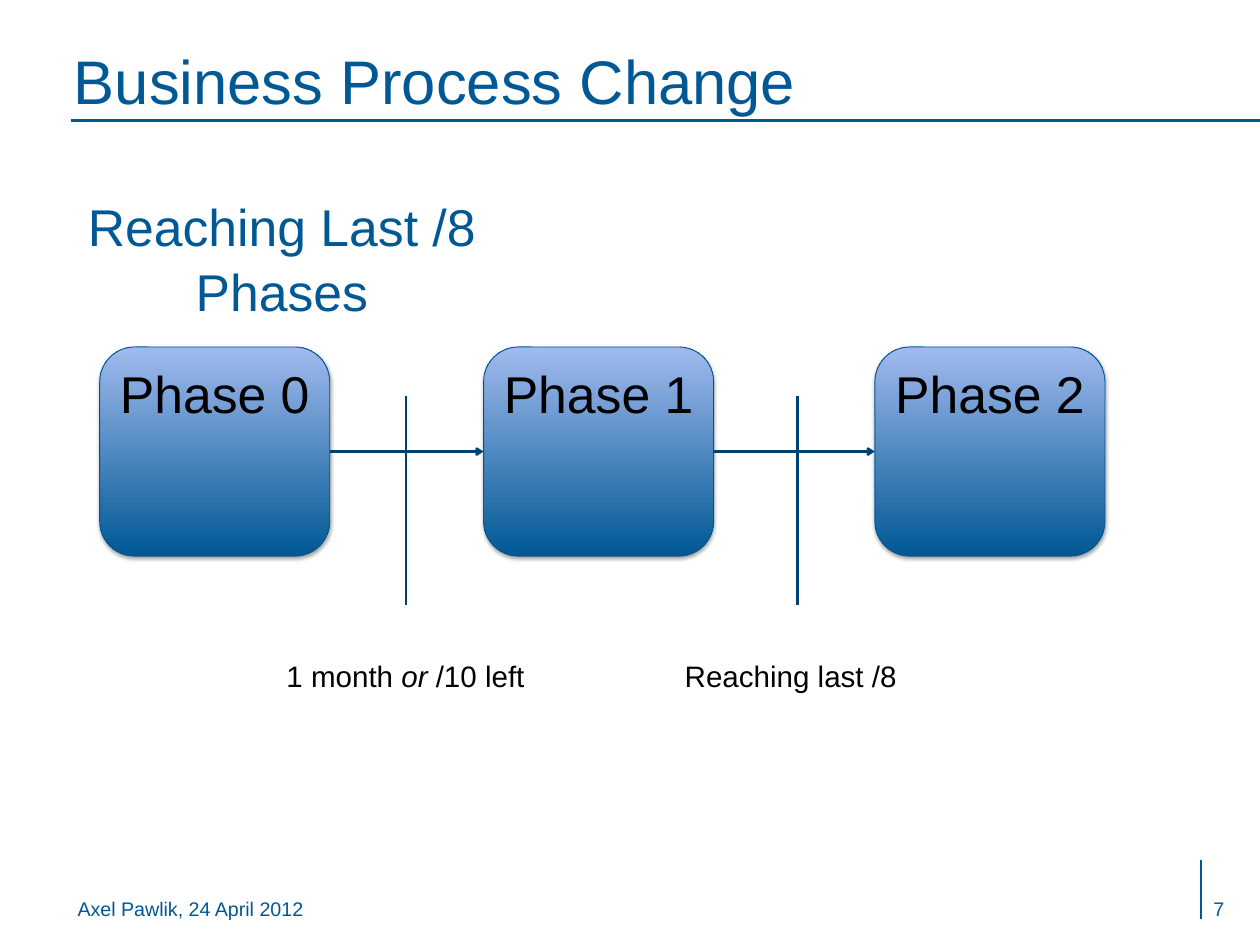
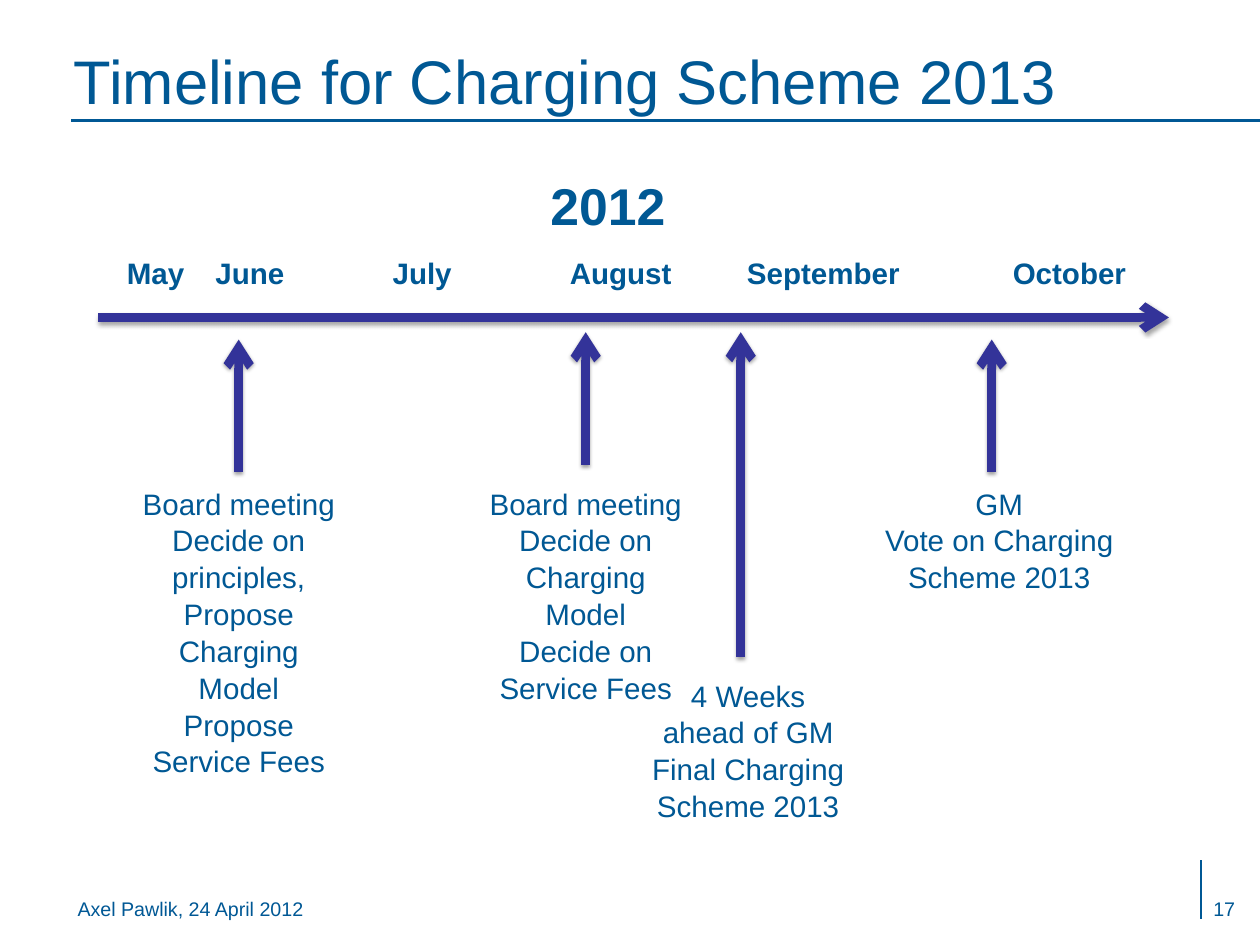
from itertools import pairwise

from lxml.etree import SubElement as Sub
from pptx import Presentation
from pptx.dml.color import RGBColor as Rgb
from pptx.enum.shapes import MSO_CONNECTOR as Link, MSO_SHAPE as Form
from pptx.enum.text import MSO_ANCHOR as Anchor, PP_ALIGN as Align
from pptx.oxml.ns import qn
from pptx.util import Pt

INK = {
    "blue": "005894",
    "rule": "005895",
    "edge": "005691",
    "pale": "A1BAEE",
    "link": "00426F",
    "time": "333399",
    "black": "000000",
}
FONT = "Arial"
WIDE, HIGH = 1024, 768


def color(name):
    return Rgb.from_string(INK[name])


def write(frame, lines, size, ink="blue", bold=False, align=Align.CENTER, pitch=None):
    for num, line in enumerate(lines):
        para = frame.add_paragraph() if num else frame.paragraphs[0]
        para.alignment = align
        para.line_spacing = pitch
        parts = line.split("_")
        para.text = parts[0]
        for part in parts[1:]:
            para.add_run().text = part
        for spot, run in enumerate(para.runs):
            run.font.name = FONT
            run.font.size = Pt(size)
            run.font.bold = bold
            run.font.italic = spot % 2 == 1
            run.font.color.rgb = color(ink)


def label(slide, rect, lines, size, wrap=True, **style):
    frame = slide.shapes.add_textbox(*map(Pt, rect)).text_frame
    frame.word_wrap = wrap
    write(frame, lines, size, **style)
    return frame


def inset(frame, left, top, right, low):
    frame.margin_left, frame.margin_top = Pt(left), Pt(top)
    frame.margin_right, frame.margin_bottom = Pt(right), Pt(low)


def effect(shape, shade):
    box = Sub(shape._element.spPr, qn("a:effectLst"))
    if shade:
        cast = Sub(box, qn("a:outerShdw"), blurRad=str(Pt(3.1)), dist=str(Pt(1.8)),
                   dir="5400000", rotWithShape="0")
        tone = Sub(cast, qn("a:srgbClr"), val=INK["black"])
        Sub(tone, qn("a:alpha"), val="35000")


def line(slide, start, end, ink, width, head=False, shade=False):
    link = slide.shapes.add_connector(Link.STRAIGHT, *map(Pt, start + end))
    link.line.color.rgb = color(ink)
    link.line.width = Pt(width)
    if head:
        Sub(link.line._get_or_add_ln(), qn("a:tailEnd"), type="arrow")
    effect(link, shade)
    return link


def phase(slide, left, name):
    box = slide.shapes.add_shape(Form.ROUNDED_RECTANGLE, *map(Pt, (left, 282, 187, 170)))
    box.fill.gradient()
    box.fill.gradient_angle = 90
    for stop, ink in zip(box.fill.gradient_stops, ("blue", "pale")):
        stop.color.rgb = color(ink)
    box.line.color.rgb = color("edge")
    box.line.width = Pt(0.75)
    effect(box, True)
    frame = box.text_frame
    frame.vertical_anchor = Anchor.TOP
    inset(frame, 0, 3.6, 0, 3.6)
    write(frame, [name], 42, "black")
    return box


def event(slide, mid, tip, tail, rect, lines):
    line(slide, (mid, tail), (mid, tip), "time", 7, True, True)
    label(slide, rect, lines, 24, pitch=1.04)


def page(deck, title, num):
    slide = deck.slides.add_slide(deck.slide_layouts[6])
    foot = label(slide, (57, 729, 720, 18), ["Axel Pawlik, 24 April 2012"], 16,
                 ink="rule", align=Align.LEFT)
    inset(foot, 6, 0, 6, 0)
    line(slide, (976, 699), (976, 747), "rule", 1)
    line(slide, (58, 98), (WIDE, 98), "rule", 2)
    head = label(slide, (56, 20, 926, 79), [title], 50, align=Align.LEFT)
    head.vertical_anchor = Anchor.BOTTOM
    inset(head, 4, 4, 4, 4)
    label(slide, (979, 725, 36, 26), [num], 16, wrap=False, align=Align.LEFT)
    return slide


def change(deck):
    slide = page(deck, "Business Process Change", "7")
    boxes = [phase(slide, left, f"Phase {num}") for num, left in enumerate((81, 393, 711))]
    for prior, after in pairwise(boxes):
        link = line(slide, (0, 0), (0, 0), "link", 2, head=True)
        link.begin_connect(prior, 3)
        link.end_connect(after, 1)
    gates = ((330, 222, "1 month _or_ /10 left"), (648, 535, "Reaching last /8"))
    for mid, left, name in gates:
        line(slide, (mid, 322), (mid, 492), "link", 2)
        label(slide, (left, 531, 215, 36), [name], 24, ink="black")
    label(slide, (54, 153, 350, 110), ["Reaching Last /8 Phases"], 42, pitch=1.04)


def timeline(deck):
    slide = page(deck, "Timeline for Charging Scheme 2013", "17")
    label(slide, (386, 138, 216, 58), ["2012"], 42, bold=True)
    months = label(slide, (96, 204, 880, 37),
                   ["May\tJune\tJuly\tAugust\tSeptember\tOctober"],
                   24, bold=True, align=Align.LEFT)
    tabs = Sub(months.paragraphs[0]._p.get_or_add_pPr(), qn("a:tabLst"))
    for inch in (1, 3, 5, 7, 10):
        Sub(tabs, qn("a:tab"), pos=str(Pt(72 * inch)), algn="l")
    line(slide, (80, 258), (950, 258), "time", 7, True, True)
    event(slide, 194, 276, 384, (104, 390, 180, 211),
          ["Board meeting", "Decide on principles, Propose Charging Model",
           "Propose Service Fees"])
    event(slide, 476, 270, 378, (386, 390, 180, 153),
          ["Board meeting", "Decide on Charging Model", "Decide on Service Fees"])
    event(slide, 602, 270, 534, (518, 546, 180, 124),
          ["4 Weeks ahead of GM", "Final Charging Scheme 2013"])
    event(slide, 806, 276, 384, (704, 390, 216, 94),
          ["GM", "Vote on Charging Scheme 2013"])


def main():
    deck = Presentation()
    deck.slide_width, deck.slide_height = Pt(WIDE), Pt(HIGH)
    change(deck)
    timeline(deck)
    deck.save("out.pptx")


if __name__ == "__main__":
    main()
